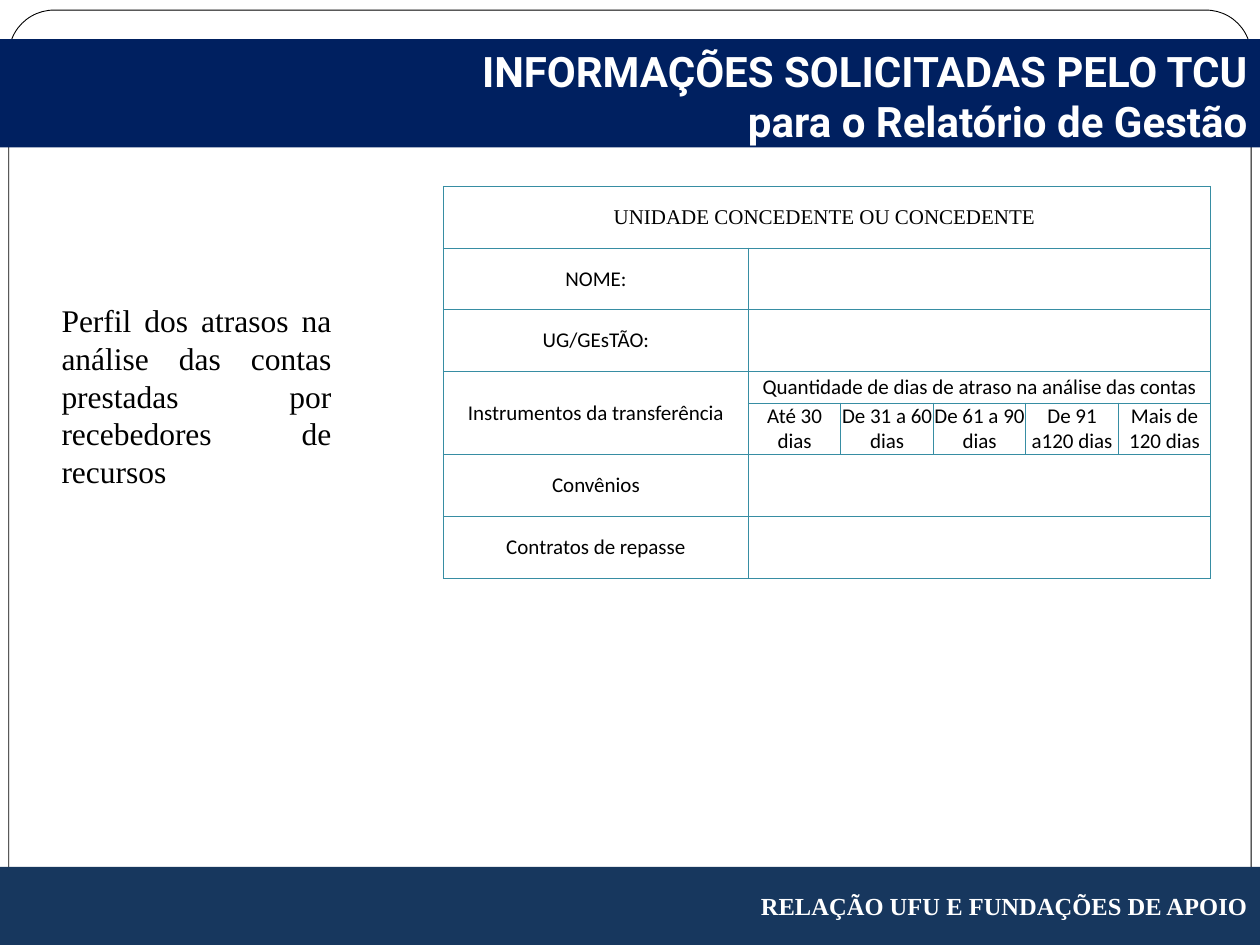
from lxml import etree
from pptx import Presentation
from pptx.dml.color import RGBColor
from pptx.enum.shapes import MSO_SHAPE
from pptx.enum.text import MSO_ANCHOR, MSO_AUTO_SIZE, PP_ALIGN
from pptx.oxml.ns import qn
from pptx.util import Inches, Pt

RECT, ROUND = MSO_SHAPE.RECTANGLE, MSO_SHAPE.ROUNDED_RECTANGLE
TOP, MIDDLE = MSO_ANCHOR.TOP, MSO_ANCHOR.MIDDLE
CENTER, RIGHT, JUSTIFY = PP_ALIGN.CENTER, PP_ALIGN.RIGHT, PP_ALIGN.JUSTIFY
NO_FIT = MSO_AUTO_SIZE.NONE
GROW = MSO_AUTO_SIZE.SHAPE_TO_FIT_TEXT
SERIF = "Times New Roman"
BORDER = "378DA3"


def rgb(color):
    return RGBColor.from_string(color)


def write(tf, lines, size, font, color, align, bold=False):
    tf.word_wrap = True
    for i, line in enumerate(lines):
        p = tf.add_paragraph() if i else tf.paragraphs[0]
        p.alignment = align
        r = p.add_run()
        r.text = line
        r.font.size = Pt(size)
        r.font.name = font
        r.font.bold = bold
        r.font.color.rgb = rgb(color)


prs = Presentation()
prs.slide_width, prs.slide_height = Inches(10), Inches(7.5)
s = prs.slides.add_slide(prs.slide_layouts[5])

frame = s.shapes.add_shape(ROUND, Inches(0.07), Inches(0.08), Inches(9.86), Inches(7.32))
frame.adjustments[0] = 0.049
frame.shadow.inherit = False
frame.fill.solid()
frame.fill.fore_color.rgb = rgb("FFFFFF")
frame.line.color.rgb = rgb("000000")
frame.line.width = Pt(0.5)

footer = s.shapes.add_shape(RECT, 0, Inches(6.88), Inches(10), Inches(0.62))
footer.shadow.inherit = False
footer.fill.solid()
footer.fill.fore_color.rgb = rgb("17375E")
footer.line.fill.background()
footer.text_frame.vertical_anchor = MIDDLE
write(footer.text_frame, ["RELAÇÃO UFU E FUNDAÇÕES DE APOIO"], 14, SERIF, "FFFFFF", RIGHT, True)

col_widths = [2.42] + [0.734] * 5
row_heights = [0.49, 0.49, 0.49, 0.25, 0.41, 0.49, 0.49]
table = s.shapes.add_table(len(row_heights), len(col_widths), Inches(3.52), Inches(1.48),
                           Inches(sum(col_widths)), Inches(sum(row_heights))).table
table.first_row = table.horz_banding = False
for col, width in zip(table.columns, col_widths):
    col.width = Inches(width)
for row, height in zip(table.rows, row_heights):
    row.height = Inches(height)

texts = [
    ["UNIDADE CONCEDENTE OU CONCEDENTE "],
    ["NOME:"],
    ["UG/GEsTÃO:"],
    ["Instrumentos da transferência", "Quantidade de dias de atraso na análise das contas"],
    ["", "Até 30 dias", "De 31 a 60 dias", "De 61 a 90 dias", "De 91 a120 dias", "Mais de 120 dias"],
    ["Convênios"],
    ["Contratos de repasse"],
]
table.cell(0, 0).merge(table.cell(0, 5))
table.cell(3, 0).merge(table.cell(4, 0))
for i in (1, 2, 3, 5, 6):
    table.cell(i, 1).merge(table.cell(i, 5))

for i, row in enumerate(table.rows):
    for j, cell in enumerate(row.cells):
        cell.margin_left = cell.margin_right = cell.margin_top = cell.margin_bottom = 0
        cell.vertical_anchor = MIDDLE
        tcPr = cell._tc.get_or_add_tcPr()
        for side in ("a:lnL", "a:lnR", "a:lnT", "a:lnB"):
            ln = etree.SubElement(tcPr, qn(side), w=str(Pt(0.75)))
            fill = etree.SubElement(ln, qn("a:solidFill"))
            etree.SubElement(fill, qn("a:srgbClr"), val=BORDER)
        cell.fill.background()
        if j < len(texts[i]) and texts[i][j]:
            font = "Calibri" if i else SERIF
            write(cell.text_frame, [texts[i][j]], 12, font, "000000", CENTER)

title = s.shapes.title
title.left, title.top, title.width, title.height = 0, Inches(0.31), Inches(10), Inches(0.86)
title.fill.solid()
title.fill.fore_color.rgb = rgb("002060")
title.text_frame.auto_size = NO_FIT
title.text_frame.vertical_anchor = TOP
write(title.text_frame, ["INFORMAÇÕES SOLICITADAS PELO TCU", " para o Relatório de Gestão"],
      24, "Roboto", "FFFFFF", RIGHT, True)
s.shapes.element.append(title.element)

caption = s.shapes.add_textbox(Inches(0.39), Inches(2.34), Inches(2.34), Inches(1.62))
caption.text_frame.auto_size = GROW
write(caption.text_frame,
      ["Perfil dos atrasos na análise das contas prestadas por recebedores de recursos"],
      18, SERIF, "000000", JUSTIFY)

prs.save("out.pptx")
